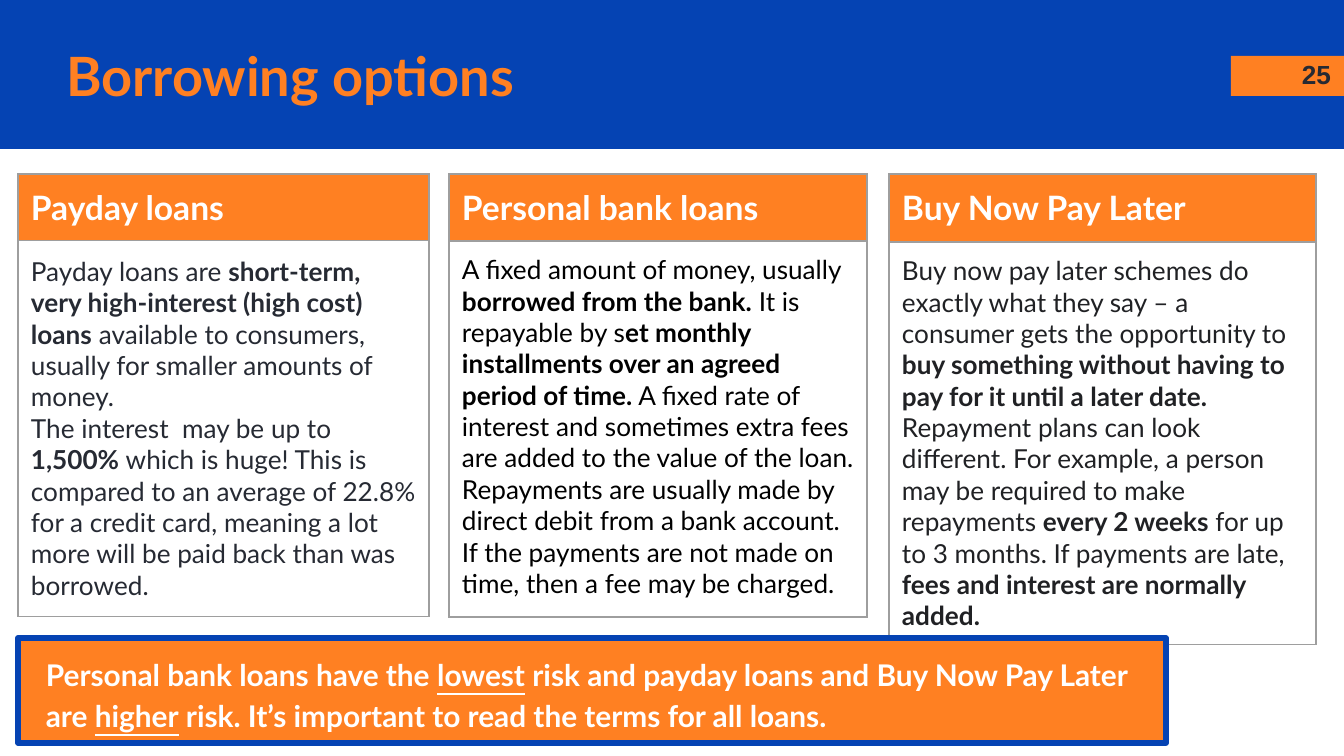
from dataclasses import dataclass

from lxml.etree import SubElement
from pptx import Presentation
from pptx.dml.color import RGBColor
from pptx.enum.shapes import MSO_SHAPE
from pptx.enum.text import MSO_ANCHOR, MSO_AUTO_SIZE, PP_ALIGN
from pptx.oxml import parse_xml
from pptx.oxml.ns import nsdecls, qn
from pptx.shapes.autoshape import Shape
from pptx.slide import Slide
from pptx.table import _Cell
from pptx.text.text import TextFrame, _Paragraph
from pptx.util import Emu, Pt

BLUE = RGBColor(0x05, 0x43, 0xB3)
ORANGE = RGBColor(0xFF, 0x80, 0x22)
WHITE = RGBColor(0xFF, 0xFF, 0xFF)
BLACK = RGBColor(0x00, 0x00, 0x00)
SLATE = RGBColor(0x26, 0x2A, 0x33)
CHARCOAL = RGBColor(0x20, 0x21, 0x24)
GREY = RGBColor(0x9E, 0x9E, 0x9E)

PX_PER_INCH = 134.4
INSET = 13
CARD_TOP = 174
CARD_BODY_HEIGHT = 376


@dataclass(frozen=True)
class Span:
    text: str
    bold: bool = False
    underline: bool = False


@dataclass(frozen=True)
class LoanCard:
    heading: str
    left: int
    width: int
    header_height: int
    color: RGBColor
    anchor: MSO_ANCHOR
    paragraphs: list[list[Span]]


LOAN_CARDS = [
    LoanCard("Payday loans", 18, 411, 66, SLATE, MSO_ANCHOR.MIDDLE, [
        [
            Span("Payday loans are "),
            Span("short-term, very high-interest (high cost) loans", bold=True),
            Span(" available to consumers, usually for smaller amounts of money."),
        ],
        [
            Span("The interest  may be up to "),
            Span("1,500% ", bold=True),
            Span("which is huge! This is compared to an average of 22.8% for a "
                 "credit card, meaning a lot more will be paid back than was borrowed."),
        ],
    ]),
    LoanCard("Personal bank loans", 449, 418, 67, BLACK, MSO_ANCHOR.TOP, [
        [
            Span("A fixed amount of money, usually "),
            Span("borrowed from the bank.", bold=True),
            Span(" It is repayable by s"),
            Span("et monthly installments over an agreed period of time.", bold=True),
            Span(" A fixed rate of interest and sometimes extra fees are added to "
                 "the value of the loan."),
        ],
        [
            Span("Repayments are usually made by direct debit from a bank account. "
                 "If the payments are not made on time, then a fee may be charged."),
        ],
    ]),
    LoanCard("Buy Now Pay Later", 889, 427, 68, CHARCOAL, MSO_ANCHOR.TOP, [
        [
            Span("Buy now pay later schemes do exactly what they say – a consumer "
                 "gets the opportunity to "),
            Span("buy something without having to pay for it until a later date.", bold=True),
            Span(" Repayment plans can look different. For example, a person may be "
                 "required to make repayments "),
            Span("every 2 weeks", bold=True),
            Span(" for up to 3 months. If payments are late, "),
            Span("fees and interest are normally added.", bold=True),
        ],
    ]),
]

ADVICE = [
    Span("Personal bank loans have the ", bold=True),
    Span("lowest", bold=True, underline=True),
    Span(" risk and payday loans and Buy Now Pay Later are ", bold=True),
    Span("higher", bold=True, underline=True),
    Span(" risk. It’s important to read the terms for all loans.", bold=True),
]


def px(length: int) -> Emu:
    return Emu(round(length * 914400 / PX_PER_INCH))


def add_spans(paragraph: _Paragraph, spans: list[Span], size: int,
              color: RGBColor, font_name: str = "Lato") -> None:
    for span in spans:
        run = paragraph.add_run()
        run.text = span.text
        run.font.name = font_name
        run.font.size = Pt(size)
        run.font.bold = span.bold
        run.font.underline = span.underline
        run.font.color.rgb = color


def set_insets(holder: TextFrame | _Cell) -> None:
    holder.margin_left = holder.margin_right = px(INSET)
    holder.margin_top = holder.margin_bottom = px(INSET)


def add_block(slide: Slide, left: int, top: int, width: int, height: int,
              color: RGBColor) -> Shape:
    block = slide.shapes.add_shape(
        MSO_SHAPE.RECTANGLE, px(left), px(top), px(width), px(height))
    block.shadow.inherit = False
    block.fill.solid()
    block.fill.fore_color.rgb = color
    block.line.fill.background()
    return block


def set_borders(cell: _Cell) -> None:
    properties = cell._tc.get_or_add_tcPr()
    for position, side in enumerate(("lnL", "lnR", "lnT", "lnB")):
        border = parse_xml(f'<a:{side} {nsdecls("a")} w="{Pt(0.75)}"/>')
        fill = SubElement(border, qn("a:solidFill"))
        SubElement(fill, qn("a:srgbClr"), val=str(GREY))
        properties.insert(position, border)


def add_loan_card(slide: Slide, card: LoanCard) -> None:
    table = slide.shapes.add_table(
        2, 1, px(card.left), px(CARD_TOP), px(card.width),
        px(card.header_height + CARD_BODY_HEIGHT)).table
    table.first_row = False
    table.horz_banding = False
    table.rows[0].height = px(card.header_height)
    table.rows[1].height = px(CARD_BODY_HEIGHT)
    header, body = table.cell(0, 0), table.cell(1, 0)
    header.fill.solid()
    header.fill.fore_color.rgb = ORANGE
    body.fill.background()
    body.vertical_anchor = card.anchor
    for cell in (header, body):
        set_insets(cell)
        set_borders(cell)
    add_spans(header.text_frame.paragraphs[0], [Span(card.heading, bold=True)], 18, WHITE)
    for index, spans in enumerate(card.paragraphs):
        frame = body.text_frame
        paragraph = frame.add_paragraph() if index else frame.paragraphs[0]
        add_spans(paragraph, spans, 14, card.color)


def add_title(slide: Slide) -> None:
    title = slide.shapes.title
    title.left, title.top, title.width, title.height = px(53), px(37), px(1137), px(75)
    frame = title.text_frame
    frame.auto_size = MSO_AUTO_SIZE.NONE
    frame.vertical_anchor = MSO_ANCHOR.MIDDLE
    set_insets(frame)
    paragraph = frame.paragraphs[0]
    paragraph.alignment = PP_ALIGN.LEFT
    add_spans(paragraph, [Span("Borrowing options", bold=True)], 29, ORANGE)


def add_page_number(slide: Slide) -> None:
    frame = slide.shapes.add_textbox(px(1263), px(45), px(81), px(58)).text_frame
    frame.word_wrap = True
    set_insets(frame)
    paragraph = frame.paragraphs[0]
    paragraph.alignment = PP_ALIGN.RIGHT
    add_spans(paragraph, [Span("25", bold=True)], 14, SLATE, "Arial")


def add_advice(slide: Slide) -> None:
    advice = add_block(slide, 18, 638, 1148, 105, ORANGE)
    advice.line.color.rgb = BLUE
    advice.line.width = Pt(3)
    frame = advice.text_frame
    frame.vertical_anchor = MSO_ANCHOR.TOP
    set_insets(frame)
    paragraph = frame.paragraphs[0]
    paragraph.alignment = PP_ALIGN.LEFT
    paragraph.line_spacing = 1.15
    paragraph._p.get_or_add_pPr().set("marL", str(px(15)))
    add_spans(paragraph, ADVICE, 16, WHITE)


def main() -> None:
    presentation = Presentation()
    presentation.slide_width, presentation.slide_height = px(1344), px(756)
    slide = presentation.slides.add_slide(presentation.slide_layouts[5])
    add_block(slide, 0, 0, 1344, 149, BLUE)
    add_block(slide, 1231, 56, 113, 40, ORANGE)
    for card in LOAN_CARDS:
        add_loan_card(slide, card)
    add_advice(slide)
    add_title(slide)
    slide.shapes._spTree.append(slide.shapes.title._element)
    add_page_number(slide)
    presentation.save("out.pptx")


if __name__ == "__main__":
    main()
